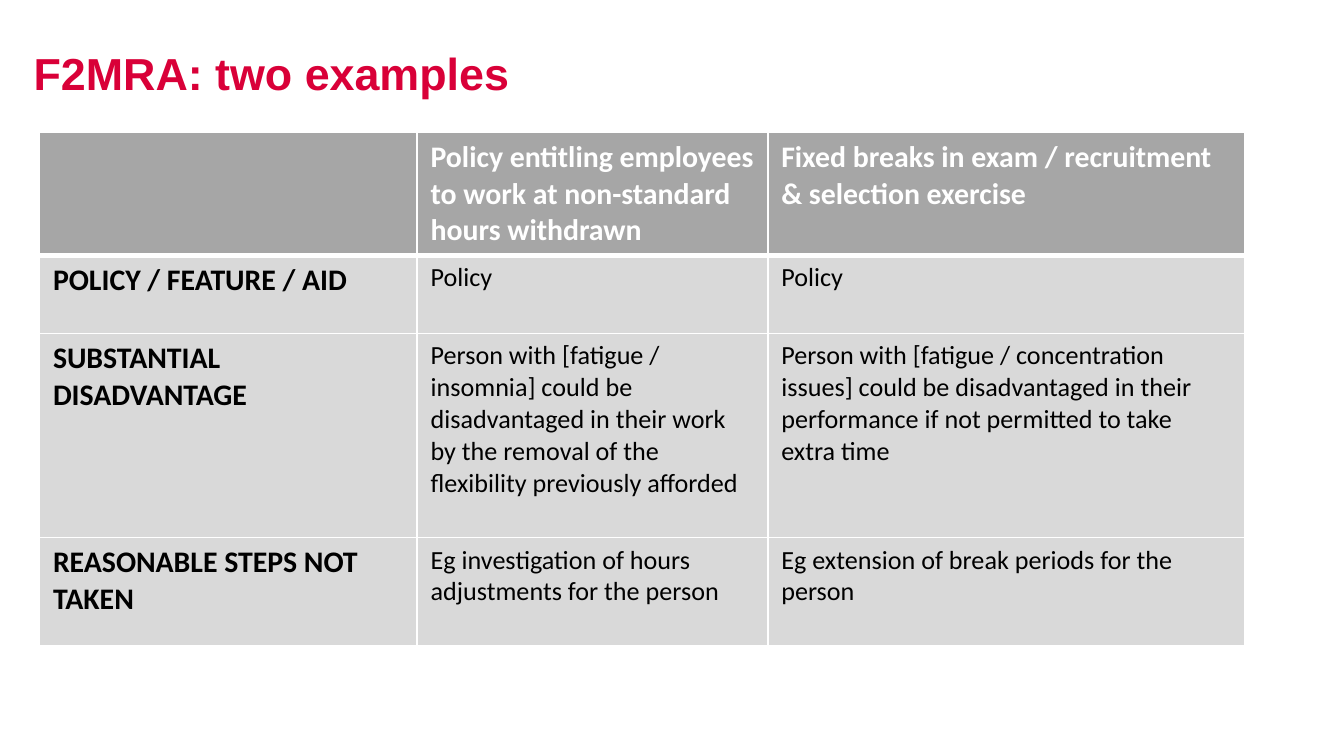
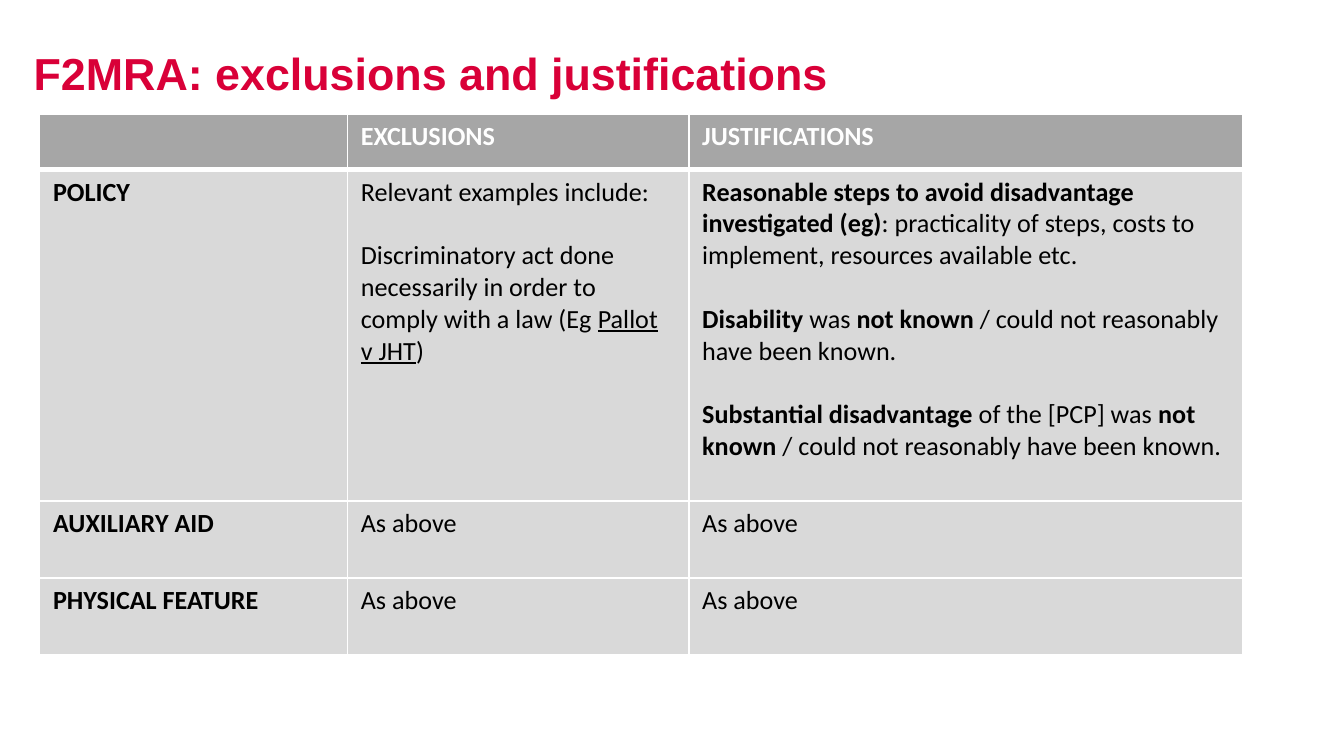
from dataclasses import dataclass

from lxml import etree
from pptx import Presentation
from pptx.dml.color import RGBColor
from pptx.oxml.ns import qn
from pptx.util import Pt


@dataclass(frozen=True)
class Theme:
    red: str = "D90038"
    white: str = "FFFFFF"
    black: str = "000000"
    header_grey: str = "A6A6A6"
    body_grey: str = "D9D9D9"
    title_font: str = "Arial"
    table_font: str = "Calibri"
    title_size: float = 24
    label_size: float = 16
    body_size: float = 14
    paragraph_gap: float = 17.1
    thin_line: float = 1
    thick_line: float = 3


class SlideBuilder:
    """Holds the style and the current slide."""

    def __init__(self, deck, theme):
        self.deck = deck
        self.theme = theme
        self.page = None

    def new_page(self, title):
        self.page = self.deck.slides.add_slide(self.deck.slide_layouts[6])
        self.add_title(title)

    def set_font(self, font, name, size, color, bold):
        font.name, font.size, font.bold = name, Pt(size), bold
        font.color.rgb = RGBColor.from_string(color)

    def add_title(self, text):
        theme = self.theme
        box = self.page.shapes.add_textbox(Pt(12.25), Pt(17.3), Pt(694), Pt(34.5))
        frame = box.text_frame
        frame.word_wrap = True
        frame.margin_left, frame.margin_top = Pt(5.75), Pt(7)
        para = frame.paragraphs[0]
        para.text = text
        self.set_font(para.font, theme.title_font, theme.title_size, theme.red, True)

    def add_table(self, top, widths, heights, rows, label_size):
        """First row is the header, first column holds the labels."""
        theme = self.theme
        table = self.page.shapes.add_table(
            len(rows), len(widths), Pt(21.2), Pt(top), Pt(sum(widths)), Pt(sum(heights))
        ).table
        table.horz_banding = False
        for column, width in zip(table.columns, widths):
            column.width = Pt(width)
        for row, height in zip(table.rows, heights):
            row.height = Pt(height)

        for r, row in enumerate(rows):
            for c, content in enumerate(row):
                cell = table.cell(r, c)
                header = r == 0
                strong = header or c == 0
                self.add_borders(cell, r)
                cell.fill.solid()
                fill = theme.header_grey if header else theme.body_grey
                cell.fill.fore_color.rgb = RGBColor.from_string(fill)
                self.fill_cell(
                    cell, content,
                    label_size if strong else theme.body_size,
                    theme.white if header else theme.black, strong,
                )

    def add_borders(self, cell, row):
        """White rules, thicker between the header and the body."""
        theme = self.theme
        thick_side = {0: "lnB", 1: "lnT"}.get(row)
        properties = cell._tc.get_or_add_tcPr()
        for side in ("lnL", "lnR", "lnT", "lnB"):
            width = theme.thick_line if side == thick_side else theme.thin_line
            line = etree.SubElement(properties, qn(f"a:{side}"), w=str(Pt(width)))
            fill = etree.SubElement(line, qn("a:solidFill"))
            etree.SubElement(fill, qn("a:srgbClr"), val=theme.white)

    def fill_cell(self, cell, content, size, color, bold):
        """Content is a string, or a list of paragraphs made of (text, style) spans."""
        paragraphs = [[(content, "")]] if isinstance(content, str) else content
        frame = cell.text_frame
        for index, spans in enumerate(paragraphs):
            para = frame.add_paragraph() if index else frame.paragraphs[0]
            if index:
                para.space_before = Pt(self.theme.paragraph_gap)
            self.set_font(para.font, self.theme.table_font, size, color, bold)
            for text, style in spans:
                if not text:
                    continue
                span = para.add_run()
                span.text = text
                if style == "bold":
                    span.font.bold = True
                elif style == "underline":
                    span.font.underline = True


def build_examples(builder):
    builder.new_page("F2MRA: two examples")
    rows = [
        ["",
         "Policy entitling employees to work at non-standard hours withdrawn",
         "Fixed breaks in exam / recruitment & selection exercise"],
        ["POLICY / FEATURE / AID", "Policy", "Policy"],
        ["SUBSTANTIAL DISADVANTAGE",
         "Person with [fatigue / insomnia] could be disadvantaged in their work "
         "by the removal of the flexibility previously afforded",
         "Person with [fatigue / concentration issues] could be disadvantaged in "
         "their performance if not permitted to take extra time"],
        ["REASONABLE STEPS NOT TAKEN",
         "Eg investigation of hours adjustments for the person",
         "Eg extension of break periods for the person"],
    ]
    builder.add_table(71, [202.3, 187.9, 255.6], [65.8, 41.8, 109.4, 58.2],
                      rows, builder.theme.label_size)


def build_exclusions(builder):
    builder.new_page("F2MRA: exclusions and justifications")
    not_known = [("not known", "bold"),
                 (" / could not reasonably have been known.", "")]
    exclusions = [
        [("Relevant examples include:", "")],
        [("Discriminatory act done necessarily in order to comply with a law (Eg ", ""),
         ("Pallot v JHT", "underline"), (")", "")],
    ]
    justifications = [
        [("Reasonable steps to avoid disadvantage investigated (eg)", "bold"),
         (": practicality of steps, costs to implement, resources available etc.", "")],
        [("Disability", "bold"), (" was ", ""), *not_known],
        [("Substantial disadvantage ", "bold"), ("of the [PCP] was ", ""), *not_known],
    ]
    rows = [
        ["", "EXCLUSIONS", "JUSTIFICATIONS"],
        ["POLICY", exclusions, justifications],
        ["AUXILIARY AID", "As above", "As above"],
        ["PHYSICAL FEATURE", "As above", "As above"],
    ]
    builder.add_table(61.2, [164.9, 182.9, 296.6], [29.6, 177.6, 41.3, 41.3],
                      rows, builder.theme.body_size)


def main():
    deck = Presentation()
    deck.slide_width, deck.slide_height = Pt(720), Pt(405)
    builder = SlideBuilder(deck, Theme())
    build_examples(builder)
    build_exclusions(builder)
    deck.save("out.pptx")


if __name__ == "__main__":
    main()
